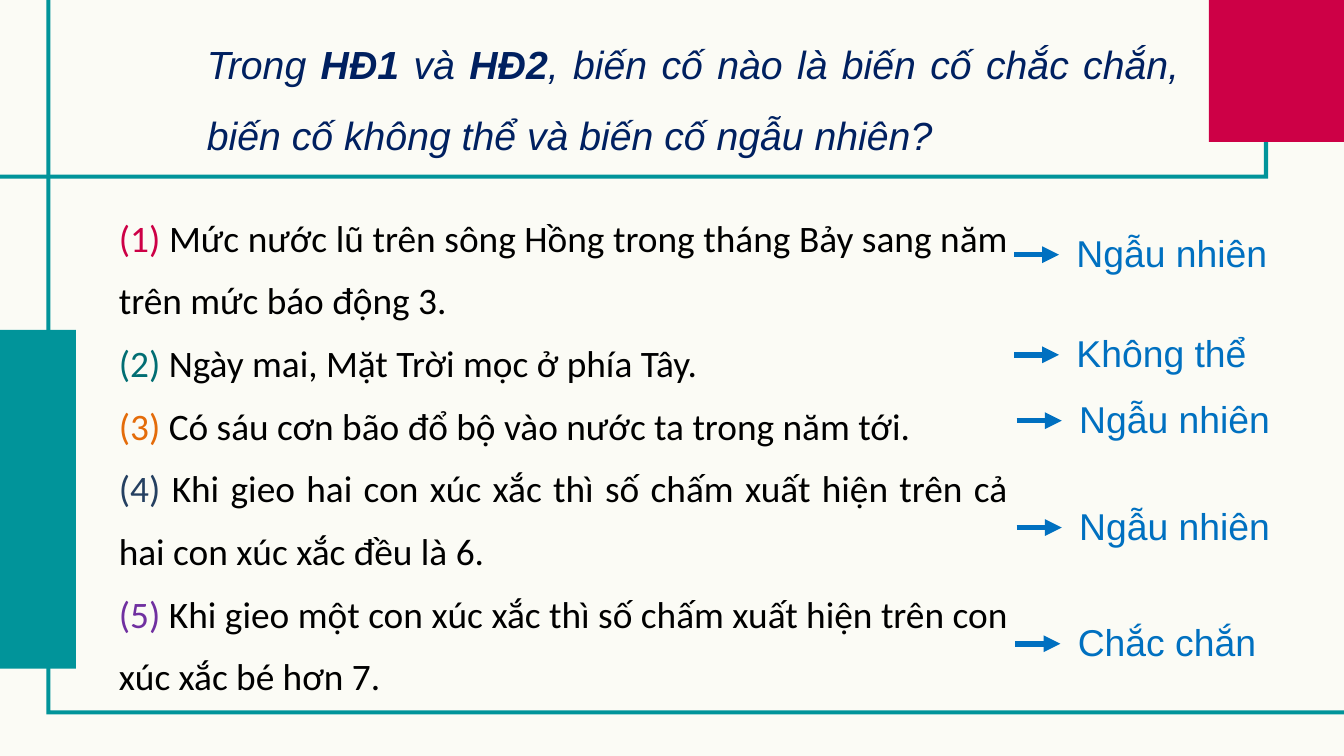
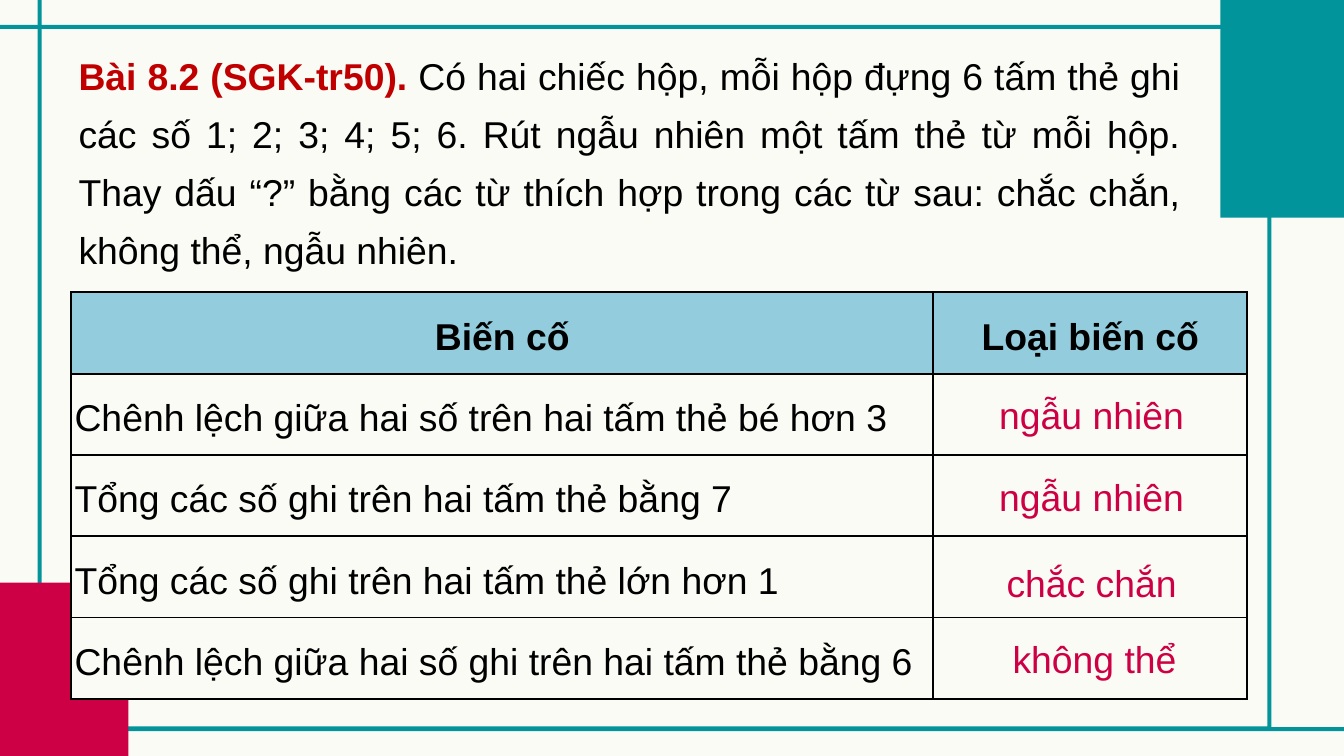
"""Two lesson slides on certain, impossible and random events."""
from dataclasses import dataclass

from lxml import etree
from pptx import Presentation
from pptx import util as u
from pptx.dml.color import RGBColor
from pptx.enum import shapes, text
from pptx.oxml import ns


@dataclass(frozen=True)
class Theme:
    """Colours, fonts and sizes that both slides share."""
    paper: str = "FBFBF5"
    teal: str = "01949A"
    crimson: str = "CD0046"
    navy: str = "002060"
    blue: str = "0070C0"
    red: str = "C00000"
    black: str = "000000"
    header: str = "93CDDD"
    numbers: tuple = ("CD0046", "016E73", "E46C0A", "254061", "7030A0")
    font: str = "Arial"
    list_font: str = "Calibri"
    question_size: int = 42
    body_size: int = 40
    frame_width: float = 0.06
    arrow_width: int = 6
    border_width: float = 2.25


THEME = Theme()
COLUMNS, ROWS = 20, 11.25
CELL = u.Inches(1)

EVENTS = (
    "Mức nước lũ trên sông Hồng trong tháng Bảy sang năm trên mức báo động 3.",
    "Ngày mai, Mặt Trời mọc ở phía Tây.",
    "Có sáu cơn bão đổ bộ vào nước ta trong năm tới.",
    "Khi gieo hai con xúc xắc thì số chấm xuất hiện trên cả hai con xúc xắc đều là 6.",
    "Khi gieo một con xúc xắc thì số chấm xuất hiện trên con xúc xắc bé hơn 7.",
)
EVENT_ANSWERS = (
    (15.09, 3.79, "Ngẫu nhiên"),
    (15.09, 5.28, "Không thể"),
    (15.13, 6.26, "Ngẫu nhiên"),
    (15.13, 7.85, "Ngẫu nhiên"),
    (15.11, 9.58, "Chắc chắn"),
)
CARD_TABLE = (
    ("Biến cố", "Loại biến cố"),
    ("Chênh lệch giữa hai số trên hai tấm thẻ bé hơn 3", ""),
    ("Tổng các số ghi trên hai tấm thẻ bằng 7", ""),
    ("Tổng các số ghi trên hai tấm thẻ lớn hơn 1", ""),
    ("Chênh lệch giữa hai số ghi trên hai tấm thẻ bằng 6", ""),
)
CARD_ANSWERS = (
    (14.77, 5.79, 2.98, "ngẫu nhiên"),
    (14.77, 7, 2.98, "ngẫu nhiên"),
    (14.88, 8.28, 2.76, "chắc chắn"),
    (14.97, 9.42, 2.67, "không thể"),
)


def grid(*lengths):
    """Turn grid columns or rows into slide units."""
    return [round(length * CELL) for length in lengths]


def apply(target, values):
    """Set each named attribute of the target."""
    for name, value in values.items():
        setattr(target, name, value)


def paint(fill, colour):
    """Give a fill one solid colour."""
    fill.solid()
    fill.fore_color.rgb = RGBColor.from_string(colour)


def style(colour, size=THEME.body_size, name=THEME.font, **emphasis):
    """Describe the format of a run."""
    return {"colour": colour, "font": {"size": u.Pt(size), "name": name, **emphasis}}


def write(paragraph, runs, **layout):
    """Fill a paragraph with formatted runs."""
    apply(paragraph, layout)
    for words, look in runs:
        run = paragraph.add_run()
        run.text = words
        apply(run.font, look["font"])
        run.font.color.rgb = RGBColor.from_string(look["colour"])


def add_text(slide, box, paragraphs, wrap=True, **layout):
    """Add a text box with one list of runs for each paragraph."""
    frame = slide.shapes.add_textbox(*grid(*box)).text_frame
    apply(frame, {"word_wrap": wrap, "auto_size": text.MSO_AUTO_SIZE.SHAPE_TO_FIT_TEXT})
    for index, runs in enumerate(paragraphs):
        paragraph = frame.add_paragraph() if index else frame.paragraphs[0]
        write(paragraph, runs, **layout)


def finish(shape, colour):
    """Leave a shape with a plain fill, no outline and no shadow."""
    paint(shape.fill, colour)
    shape.line.fill.background()
    shape.shadow.inherit = False


def add_block(slide, box, colour):
    """Add a solid corner block."""
    finish(slide.shapes.add_shape(shapes.MSO_SHAPE.RECTANGLE, *grid(*box)), colour)


def add_frame(slide, left, top, width, height):
    """Add a thin rectangular ring."""
    right, bottom, edge = left + width, top + height, THEME.frame_width
    outer = [(left, top), (left, bottom), (right, bottom), (right, top)]
    inner = [(left + edge, top + edge), (right - edge, top + edge),
             (right - edge, bottom - edge), (left + edge, bottom - edge)]
    builder = slide.shapes.build_freeform(*grid(*outer[0]))
    builder.add_line_segments([grid(*point) for point in outer[1:]])
    builder.move_to(*grid(*inner[0]))
    builder.add_line_segments([grid(*point) for point in inner[1:]])
    finish(builder.convert_to_shape(), THEME.teal)


def add_arrow(slide, left, row, length=0.67):
    """Add a horizontal arrow that points right."""
    arrow = slide.shapes.add_connector(
        shapes.MSO_CONNECTOR.STRAIGHT, *grid(left, row, left + length, row))
    arrow.line.width = u.Pt(THEME.arrow_width)
    paint(arrow.line.fill, THEME.blue)
    properties = arrow._element.spPr
    outline = properties.find(ns.qn("a:ln"))
    etree.SubElement(outline, ns.qn("a:tailEnd"), type="triangle")
    etree.SubElement(properties, ns.qn("a:effectLst"))


def add_borders(cell):
    """Draw a line on all four sides of a table cell."""
    properties = cell._tc.get_or_add_tcPr()
    for index, side in enumerate(("lnL", "lnR", "lnT", "lnB")):
        line = etree.Element(ns.qn(f"a:{side}"), w=str(u.Pt(THEME.border_width)))
        fill = etree.SubElement(line, ns.qn("a:solidFill"))
        etree.SubElement(fill, ns.qn("a:srgbClr"), val=THEME.black)
        properties.insert(index, line)


def add_table(slide, left, top, widths, row_height, content):
    """Add a bordered table with a coloured, centred header row."""
    box = grid(left, top, sum(widths), row_height * len(content))
    table = slide.shapes.add_table(len(content), len(widths), *box).table
    apply(table, {"horz_banding": False, "first_row": False})
    for column, width in zip(table.columns, grid(*widths)):
        column.width = width
    sides = ("margin_left", "margin_right", "margin_top", "margin_bottom")
    for row_index, words in enumerate(content):
        header = row_index == 0
        table.rows[row_index].height = grid(row_height)[0]
        for cell, label in zip(table.rows[row_index].cells, words):
            apply(cell, dict.fromkeys(sides, u.Inches(0.05)))
            paint(cell.fill, THEME.header if header else THEME.paper)
            add_borders(cell)
            if label:
                write(cell.text_frame.paragraphs[0], [(label, style(THEME.black, bold=header))],
                      alignment=text.PP_ALIGN.CENTER if header else text.PP_ALIGN.JUSTIFY,
                      line_spacing=1.5)


def add_slide(presentation, frames, blocks):
    """Add a blank slide with its background, frames and blocks."""
    slide = presentation.slides.add_slide(presentation.slide_layouts[6])
    paint(slide.background.fill, THEME.paper)
    for frame in frames:
        add_frame(slide, *frame)
    for box, colour in blocks:
        add_block(slide, box, colour)
    return slide


def add_event_slide(presentation):
    """Ask which events are certain, impossible or random."""
    slide = add_slide(
        presentation,
        [(0.69, -0.82, 19.7, 11.45), (-0.99, -0.82, 19.86, 3.48)],
        [((17.99, -0.27, 4.24, 2.38), THEME.crimson), ((-2.4, 4.91, 3.53, 5.04), THEME.teal)])
    plain = style(THEME.navy, THEME.question_size, italic=True)
    strong = style(THEME.navy, THEME.question_size, italic=True, bold=True)
    question = [("Trong ", plain), ("HĐ1 ", strong), ("và ", plain), ("HĐ2", strong),
                (", biến cố nào là biến cố chắc chắn, "
                 "biến cố không thể và biến cố ngẫu nhiên?", plain)]
    add_text(slide, (2.98, 0.2, 14.67, 2.22), [question],
             alignment=text.PP_ALIGN.JUSTIFY, line_spacing=1.5)
    events = [[(f"({number}) ", style(colour, name=THEME.list_font)),
               (event, style(THEME.black, name=THEME.list_font))]
              for number, (event, colour) in enumerate(zip(EVENTS, THEME.numbers), 1)]
    add_text(slide, (1.67, 2.88, 13.43, 7.53), events,
             alignment=text.PP_ALIGN.JUSTIFY, line_spacing=1.4)
    for left, row, answer in EVENT_ANSWERS:
        add_arrow(slide, left, row)
        add_text(slide, (left + 0.83, row - 0.41, 3.17, 0.77), [[(answer, style(THEME.blue))]])


def add_card_slide(presentation):
    """Set the card exercise with its answer table."""
    slide = add_slide(
        presentation,
        [(0.56, -0.85, 19.7, 11.73), (-0.94, 0.37, 19.86, 10.5)],
        [((-1.9, 8.67, 3.81, 2.58), THEME.crimson), ((18.16, -0.33, 2.74, 3.57), THEME.teal)])
    exercise = [("Bài 8.2 (SGK-tr50). ", style(THEME.red, bold=True)),
                ("Có hai chiếc hộp, mỗi hộp đựng 6 tấm thẻ ghi các số 1; 2; 3; 4; 5; 6. "
                 "Rút ngẫu nhiên một tấm thẻ từ mỗi hộp. Thay dấu “?” bằng các từ thích hợp "
                 "trong các từ sau: chắc chắn, không thể, ngẫu nhiên.", style(THEME.black))]
    add_text(slide, (1.07, 0.54, 16.59, 3.6), [exercise],
             alignment=text.PP_ALIGN.JUSTIFY, line_spacing=1.3)
    add_table(slide, 1.06, 4.35, (12.83, 4.67), 1.21, CARD_TABLE)
    for left, top, width, answer in CARD_ANSWERS:
        add_text(slide, (left, top, width, 0.77), [[(answer, style(THEME.crimson))]], wrap=False)


def main():
    """Build and save the presentation."""
    presentation = Presentation()
    width, height = grid(COLUMNS, ROWS)
    apply(presentation, {"slide_width": width, "slide_height": height})
    add_event_slide(presentation)
    add_card_slide(presentation)
    presentation.save("out.pptx")


if __name__ == "__main__":
    main()
